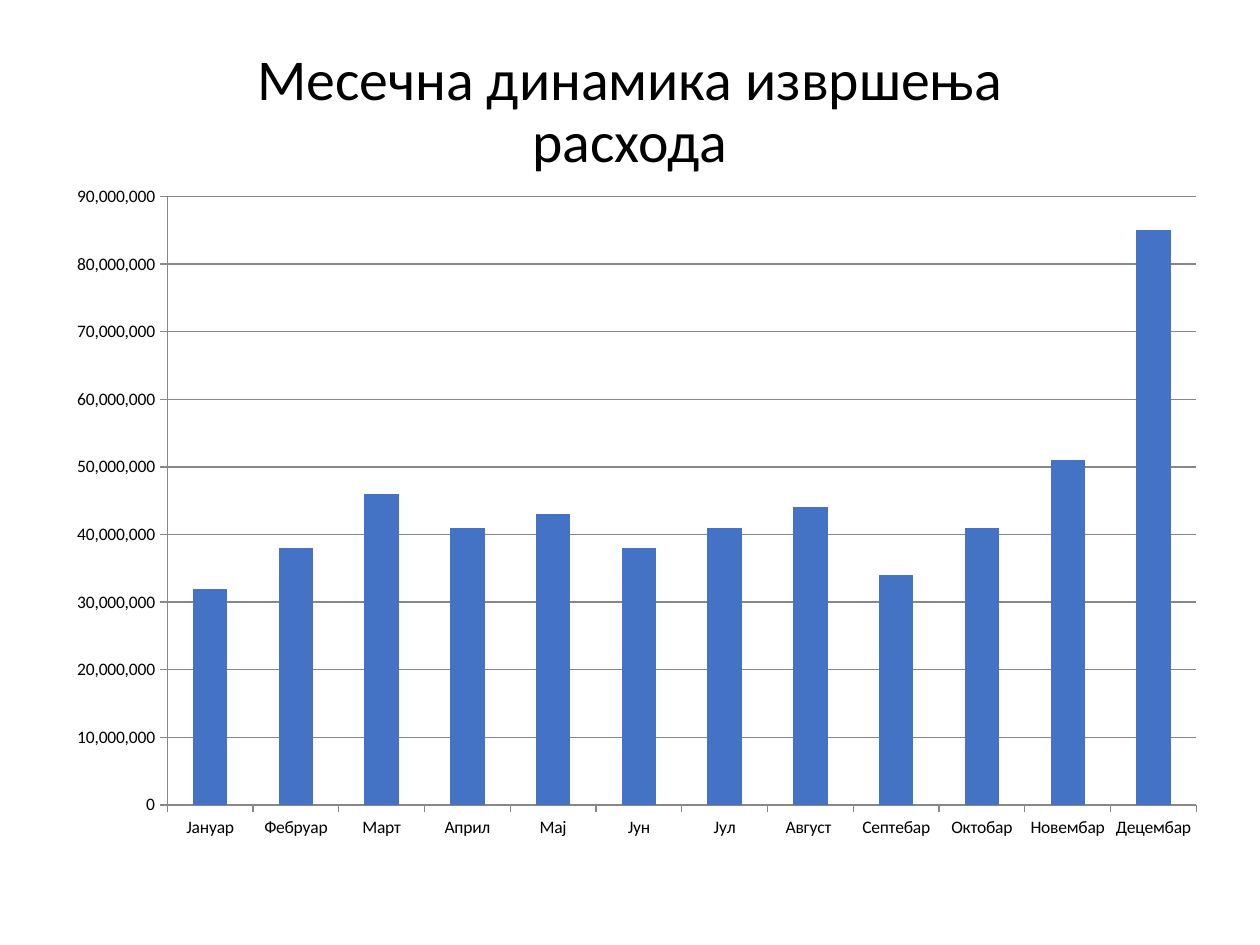
from lxml import etree
from pptx import Presentation
from pptx.chart.data import CategoryChartData
from pptx.dml.color import RGBColor
from pptx.enum import chart as chart_enum, text
from pptx.oxml.ns import qn
from pptx.util import Inches, Pt

COLORS = {"text": "000000", "bar": "4472C4", "line": "878787"}
MILLION = 1_000_000
MONTHLY_EXPENSES = {
    "Јануар": 32, "Фебруар": 38, "Март": 46, "Април": 41,
    "Мај": 43, "Јун": 38, "Јул": 41, "Август ": 44,
    "Септебар": 34, "Октобар": 41, "Новембар": 51, "Децембар": 85,
}


class SlideBuilder:
    """Holds the style and the current slide."""

    font_name = "Calibri"

    def __init__(self, presentation):
        self.slide = presentation.slides.add_slide(presentation.slide_layouts[0])
        subtitle = self.slide.placeholders[1].element
        subtitle.getparent().remove(subtitle)

    def color(self, name):
        return RGBColor.from_string(COLORS[name])

    def style_font(self, font, size):
        font.name = self.font_name
        font.size = Pt(size)
        font.color.rgb = self.color("text")

    def style_line(self, line):
        line.color.rgb = self.color("line")
        line.width = Pt(0.75)

    def title(self, wording, left, top, width, height):
        shape = self.slide.shapes.title
        shape.left, shape.top = Inches(left), Inches(top)
        shape.width, shape.height = Inches(width), Inches(height)
        frame = shape.text_frame
        frame.word_wrap = True
        frame.auto_size = text.MSO_AUTO_SIZE.NONE
        frame.vertical_anchor = text.MSO_ANCHOR.BOTTOM
        paragraph = frame.paragraphs[0]
        paragraph.alignment = text.PP_ALIGN.CENTER
        paragraph.line_spacing = 0.9
        run = paragraph.add_run()
        run.text = wording
        self.style_font(run.font, 33)

    def column_chart(self, values, left, top, width, height):
        data = CategoryChartData(number_format="#,##0")
        data.categories = list(values)
        data.add_series("Series 1", [value * MILLION for value in values.values()])
        chart = self.slide.shapes.add_chart(
            chart_enum.XL_CHART_TYPE.COLUMN_CLUSTERED,
            Inches(left), Inches(top), Inches(width), Inches(height), data,
        ).chart
        chart.has_legend = False
        chart.has_title = False
        self.style_font(chart.font, 10)

        plot = chart.plots[0]
        plot.gap_width = 150
        plot.vary_by_categories = False
        fill = plot.series[0].format.fill
        fill.solid()
        fill.fore_color.rgb = self.color("bar")

        for axis in (chart.category_axis, chart.value_axis):
            axis.major_tick_mark = chart_enum.XL_TICK_MARK.OUTSIDE
            axis.minor_tick_mark = chart_enum.XL_TICK_MARK.NONE
            self.style_line(axis.format.line)
        value_axis = chart.value_axis
        value_axis.minimum_scale = 0
        value_axis.maximum_scale = 90 * MILLION
        value_axis.major_unit = 10 * MILLION
        value_axis.has_major_gridlines = True
        self.style_line(value_axis.major_gridlines.format.line)
        value_axis.tick_labels.number_format = "#,##0"
        value_axis.tick_labels.number_format_is_linked = False
        return chart

    def place_plot(self, chart, x, y, w, h):
        """Fix the inner plot area, in fractions of the chart."""
        plot_area = chart.element.find(".//" + qn("c:plotArea"))
        for old_layout in plot_area.findall(qn("c:layout")):
            plot_area.remove(old_layout)
        layout = etree.Element(qn("c:layout"))
        plot_area.insert(0, layout)
        manual = etree.SubElement(layout, qn("c:manualLayout"))
        settings = {
            "layoutTarget": "inner", "xMode": "edge", "yMode": "edge",
            "x": x, "y": y, "w": w, "h": h,
        }
        for tag, value in settings.items():
            etree.SubElement(manual, qn("c:" + tag)).set("val", str(value))


def main():
    presentation = Presentation()
    presentation.slide_width = Inches(10)
    presentation.slide_height = Inches(7.5)
    builder = SlideBuilder(presentation)
    builder.title("Месечна динамика извршења расхода", 1.25, 0.92, 7.5, 0.52)
    chart = builder.column_chart(MONTHLY_EXPENSES, 0.42, 1.33, 9.08, 5.75)
    builder.place_plot(chart, 0.1, 0.04, 0.9, 0.84)
    presentation.save("out.pptx")


if __name__ == "__main__":
    main()
